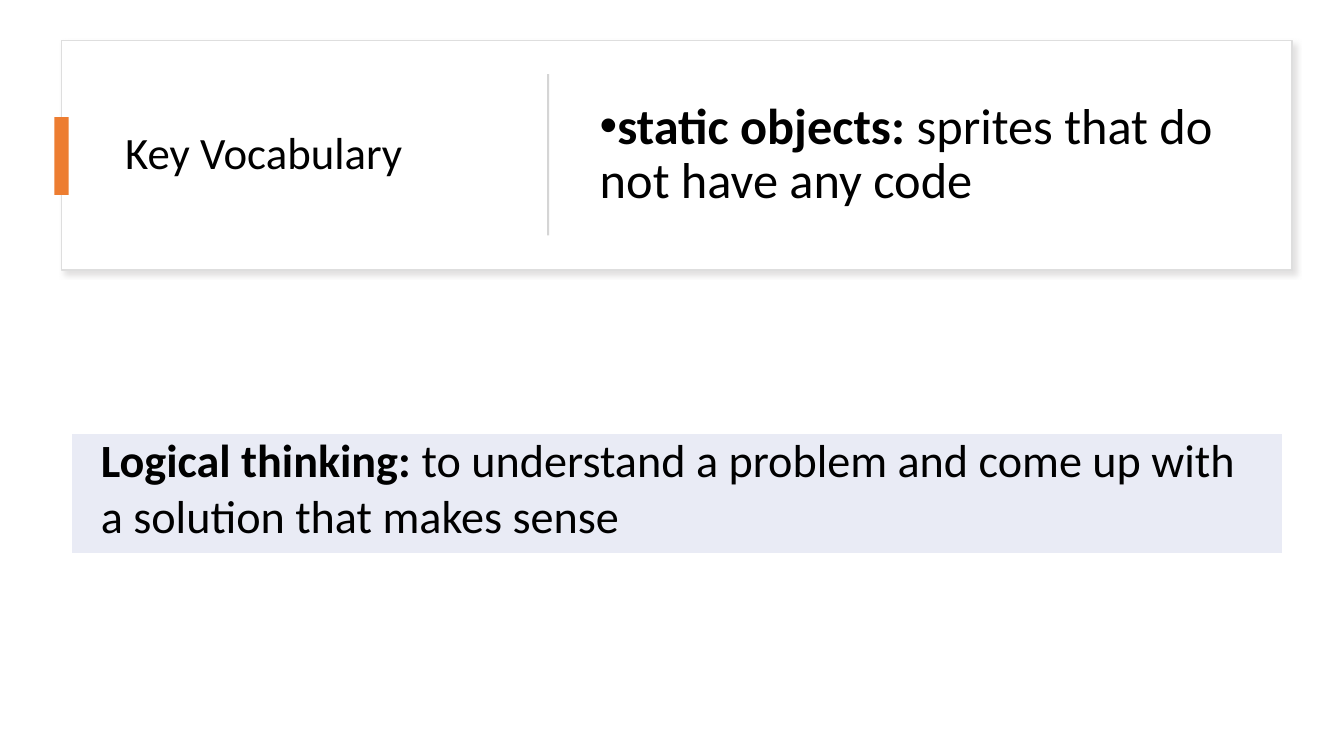
"""Build the key vocabulary slide with two term definitions."""
from lxml import etree
from pptx import Presentation
from pptx.dml.color import RGBColor
from pptx.enum.shapes import MSO_SHAPE
from pptx.enum.text import MSO_ANCHOR, MSO_AUTO_SIZE, PP_ALIGN
from pptx.oxml.ns import qn
from pptx.util import Cm, Pt

RECTANGLE = MSO_SHAPE.RECTANGLE
TOP = MSO_ANCHOR.TOP
MIDDLE = MSO_ANCHOR.MIDDLE
LEFT = PP_ALIGN.LEFT
NO_AUTOFIT = MSO_AUTO_SIZE.NONE

WHITE = RGBColor(0xFF, 0xFF, 0xFF)
BLACK = RGBColor(0x00, 0x00, 0x00)
CARD_EDGE = RGBColor(0xDE, 0xDE, 0xDE)
CARD_SHADOW = RGBColor(0xC5, 0xC3, 0xC3)
ORANGE = RGBColor(0xED, 0x7D, 0x31)
DIVIDER_GREY = RGBColor(0xD5, 0xD5, 0xD5)
PALE_BLUE = RGBColor(0xE9, 0xEB, 0xF5)


def add_xml(parent, tag, **attributes):
    return etree.SubElement(
        parent, qn(tag), {name: str(value) for name, value in attributes.items()}
    )


class VocabularySlide:
    def __init__(self, presentation, font_name):
        self.slide = presentation.slides.add_slide(presentation.slide_layouts[1])
        self.font_name = font_name

    def style(self, paragraph, size):
        paragraph.alignment = LEFT
        paragraph.font.name = self.font_name
        paragraph.font.size = Pt(size)
        paragraph.font.color.rgb = BLACK

    def write_definition(self, paragraph, term, meaning, size):
        self.style(paragraph, size)
        for text, bold in ((term, True), (meaning, False)):
            run = paragraph.add_run()
            run.text = text
            run.font.bold = bold

    def rectangle(self, box, fill, edge=None):
        shape = self.slide.shapes.add_shape(RECTANGLE, *map(Cm, box))
        shape.shadow.inherit = False
        shape.fill.solid()
        shape.fill.fore_color.rgb = fill
        if edge is None:
            shape.line.fill.background()
        else:
            shape.line.color.rgb = edge
            shape.line.width = Pt(1)
        return shape

    def card(self, box):
        card = self.rectangle(box, WHITE, CARD_EDGE)
        effects = card.element.spPr.find(qn("a:effectLst"))
        shadow = add_xml(
            effects, "a:outerShdw", blurRad=Pt(4), dist=Pt(3),
            dir=45 * 60000, algn="tl", rotWithShape=0,
        )
        color = add_xml(shadow, "a:srgbClr", val=CARD_SHADOW)
        add_xml(color, "a:alpha", val=50000)

    def place(self, placeholder, box):
        placeholder.left, placeholder.top, placeholder.width, placeholder.height = map(Cm, box)
        frame = placeholder.text_frame
        frame.word_wrap = True
        frame.auto_size = NO_AUTOFIT
        frame.vertical_anchor = MIDDLE
        paragraph = frame.paragraphs[0]
        paragraph.line_spacing = 0.9
        paragraph.space_before = Pt(0)
        self.slide.shapes._spTree.append(placeholder.element)
        return paragraph

    def title(self, box, text, size):
        heading = self.place(self.slide.shapes.title, box)
        heading.text = text
        self.style(heading, size)

    def bullet(self, box, term, meaning, size):
        entry = self.place(self.slide.placeholders[1], box)
        entry.space_after = Pt(6)
        self.write_definition(entry, term, meaning, size)
        properties = entry._p.get_or_add_pPr()
        properties.set("marL", "0")
        properties.set("indent", str(-Cm(0.64)))
        mark = etree.Element(qn("a:buChar"), {"char": "•"})
        properties.find(qn("a:defRPr")).addprevious(mark)

    def definition_table(self, box, term, meaning, size):
        table = self.slide.shapes.add_table(1, 1, *map(Cm, box)).table
        table.first_row = False
        table.horz_banding = False
        cell = table.cell(0, 0)
        cell.margin_left = cell.margin_right = Cm(0.74)
        cell.margin_top = cell.margin_bottom = 0
        cell.vertical_anchor = TOP
        self.write_definition(cell.text_frame.paragraphs[0], term, meaning, size)
        properties = cell._tc.get_or_add_tcPr()
        for side in ("a:lnL", "a:lnR", "a:lnT", "a:lnB"):
            border = add_xml(properties, side, w=Pt(1))
            add_xml(add_xml(border, "a:solidFill"), "a:srgbClr", val=WHITE)
        cell.fill.solid()
        cell.fill.fore_color.rgb = PALE_BLUE


def main():
    presentation = Presentation()
    presentation.slide_width = Cm(33.87)
    presentation.slide_height = Cm(19.05)

    vocabulary = VocabularySlide(presentation, "Calibri")
    vocabulary.card((1.55, 1.02, 31.01, 5.79))
    vocabulary.title((2.9, 1.63, 9.88, 4.57), "Key Vocabulary", 32)
    vocabulary.rectangle((1.37, 2.95, 0.36, 1.96), ORANGE)
    vocabulary.rectangle((13.79, 1.87, 0.05, 4.06), DIVIDER_GREY)
    vocabulary.bullet(
        (14.86, 1.63, 16.66, 4.57),
        "static objects:", " sprites that do not have any code", 36,
    )
    vocabulary.definition_table(
        (1.8, 10.92, 30.51, 3.02),
        "Logical thinking: ",
        "to understand a problem and come up with a solution that makes sense", 33,
    )
    presentation.save("out.pptx")


if __name__ == "__main__":
    main()
